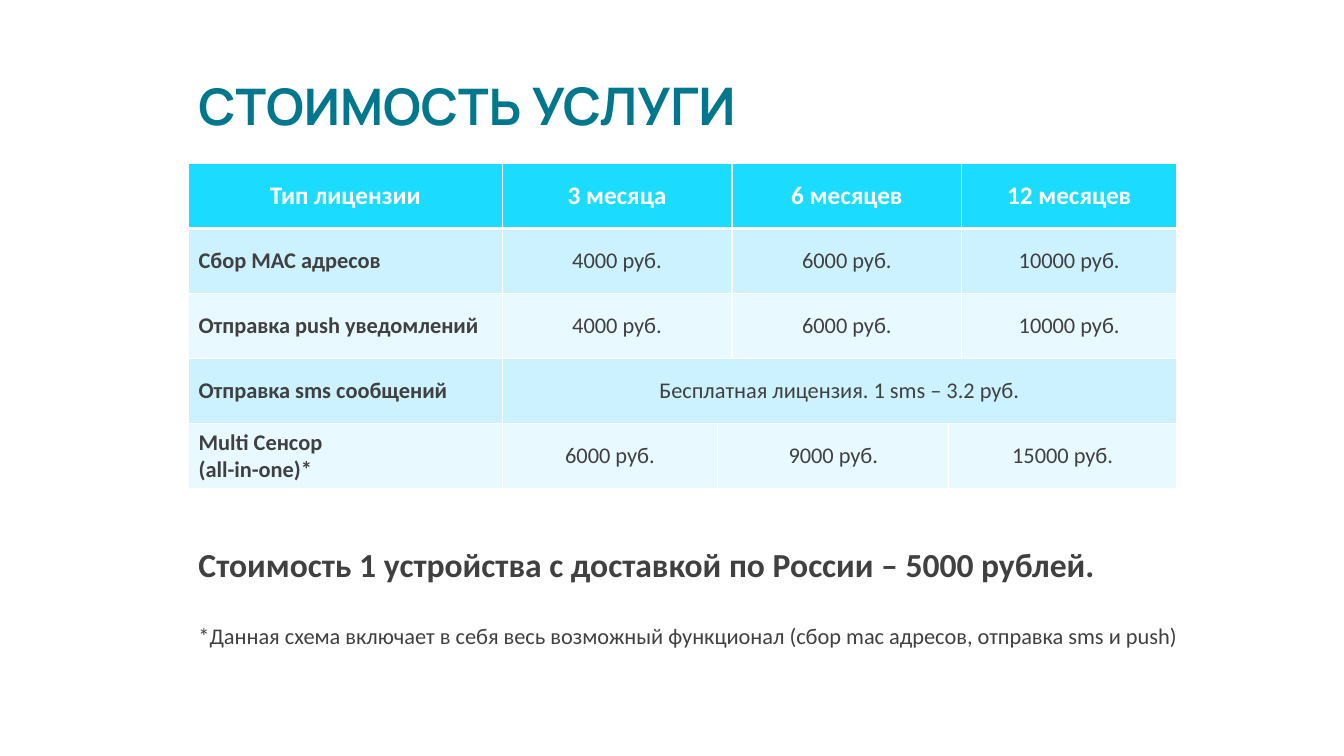
from lxml import etree
from pptx import Presentation
from pptx import util as u
from pptx.dml.color import RGBColor
from pptx.enum import text
from pptx.oxml import parse_xml

TEAL, GRAY, WHITE = "00778D", "404040", "FFFFFF"
HEADER_FILL, ROW_FILLS = "1BDCFF", ["E8F9FF", "CDF2FF"]
NAMESPACE = "http://schemas.openxmlformats.org/drawingml/2006/main"


def style(paragraph, size, color, bold=False, font="Calibri"):
    for run in paragraph.runs:
        run.font.size = u.Pt(size)
        run.font.name = font
        run.font.bold = bold
        run.font.color.rgb = RGBColor.from_string(color)


def add_text(left, top, width, height, runs, anchor, spacing):
    box = slide.shapes.add_textbox(*map(u.Inches, (left, top, width, height)))
    frame = box.text_frame
    frame.word_wrap = True
    frame.vertical_anchor = anchor
    paragraph = frame.paragraphs[0]
    paragraph.line_spacing = spacing
    for words in runs:
        paragraph.add_run().text = words
    return paragraph


presentation = Presentation()
presentation.slide_width = u.Inches(13.33)
presentation.slide_height = u.Inches(7.5)
slide = presentation.slides.add_slide(presentation.slide_layouts[6])

# Title
title = add_text(1.87, 0.59, 10.25, 0.81, ["СТОИМОСТЬ", " УСЛУГИ"],
                 text.MSO_ANCHOR.BOTTOM, 0.85)
style(title, 36, TEAL, True, "Manrope")
title.runs[1].font.size = u.Pt(37)

# Price table: each entry is (first column, last column, words)
full_row = [(0, 0), (1, 2), (3, 4), (5, 5)]
free_row = [(0, 0), (1, 5)]
sensor_row = [(0, 0), (1, 1), (2, 3), (4, 5)]
rows = [
    (full_row, ["Тип лицензии", "3 месяца", "6 месяцев", "12 месяцев"]),
    (full_row, ["Сбор MAC адресов", "4000 руб.", "6000 руб.", "10000 руб."]),
    (full_row, ["Отправка push уведомлений", "4000 руб.", "6000 руб.", "10000 руб."]),
    (free_row, ["Отправка sms сообщений", "Бесплатная лицензия. 1 sms – 3.2 руб."]),
    (sensor_row, ["Multi Сенсор\n(all-in-one)*", "6000 руб.", "9000 руб.", "15000 руб."]),
]
column_widths = [3.11, 2.14, 0.14, 2.15, 0.13, 2.13]
row_height = 0.646
table = slide.shapes.add_table(
    len(rows), len(column_widths), u.Inches(1.87), u.Inches(1.62),
    u.Inches(sum(column_widths)), u.Inches(row_height * len(rows))).table
for column, width in zip(table.columns, column_widths):
    column.width = u.Inches(width)

for row_index, (spans, labels) in enumerate(rows):
    table.rows[row_index].height = u.Inches(row_height)
    header = row_index == 0
    for (first, last), label in zip(spans, labels):
        cell = table.cell(row_index, first)
        if last > first:
            cell.merge(table.cell(row_index, last))
        cell.text_frame.text = label
        cell.vertical_anchor = text.MSO_ANCHOR.MIDDLE
        for paragraph in cell.text_frame.paragraphs:
            if header or first > 0:
                paragraph.alignment = text.PP_ALIGN.CENTER
            style(paragraph, 18 if header else 16, WHITE if header else GRAY,
                  header or first == 0)

    # Fill and white borders, thicker around the header's lower edge
    for cell in table.rows[row_index].cells:
        cell.fill.solid()
        cell.fill.fore_color.rgb = RGBColor.from_string(
            HEADER_FILL if header else ROW_FILLS[row_index % 2])
        properties = cell._tc.get_or_add_tcPr()
        for position, side in enumerate("LRTB"):
            thick = (row_index, side) in [(0, "B"), (1, "T")]
            line = parse_xml(f'<a:ln{side} xmlns:a="{NAMESPACE}" w="{u.Pt(3 if thick else 1)}"/>')
            fill = etree.SubElement(line, f"{{{NAMESPACE}}}solidFill")
            etree.SubElement(fill, f"{{{NAMESPACE}}}srgbClr", val=WHITE)
            properties.insert(position, line)

# Device price and footnote
device_price = add_text(1.87, 5.28, 10.08, 0.69,
                        ["Стоимость 1 устройства с доставкой по России – 5000 рублей."],
                        text.MSO_ANCHOR.MIDDLE, 0.9)
style(device_price, 24, GRAY, True)
footnote = add_text(1.87, 6.15, 10.08, 0.61,
                    ["*Данная схема включает в себя весь возможный функционал "
                     "(сбор mac адресов, отправка sms и push)"],
                    text.MSO_ANCHOR.TOP, 0.9)
style(footnote, 16, GRAY)

presentation.save("out.pptx")
